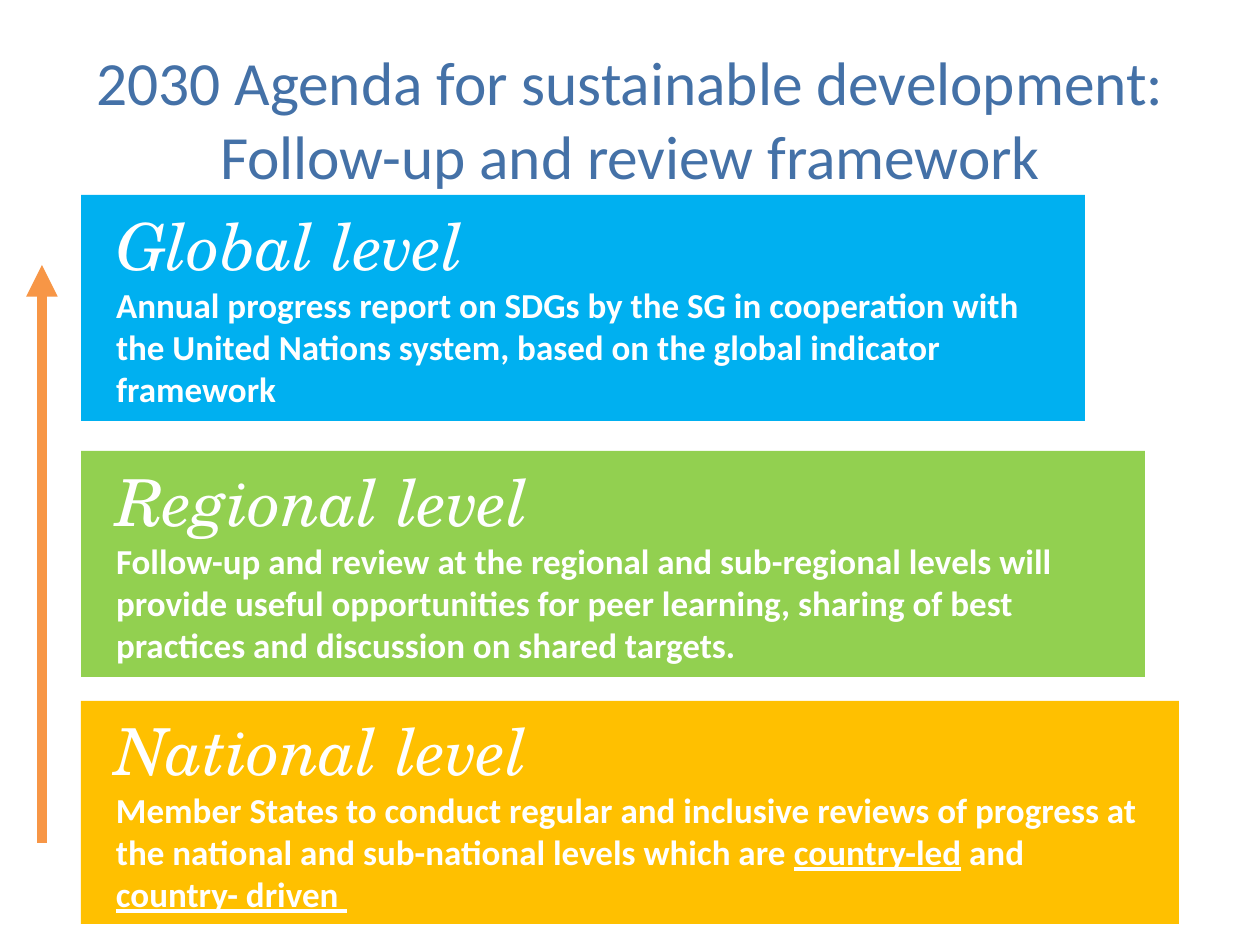
from lxml import etree
from pptx import Presentation
from pptx.dml.color import RGBColor
from pptx.enum.shapes import MSO_CONNECTOR, MSO_SHAPE
from pptx.enum.text import MSO_ANCHOR, PP_ALIGN
from pptx.oxml.ns import qn
from pptx.util import Emu, Pt

# Content: runs are (text, underlined); boxes are top, width, height in px
TITLE = "2030 Agenda for sustainable development: Follow-up and review framework"
LEVELS = [
    ("Global level", "00B0F0", (195, 1004, 226), [
        ("Annual progress report on SDGs by the SG in cooperation with the United "
         "Nations system, based on the global indicator framework", False)]),
    ("Regional level", "92D050", (451, 1064, 226), [
        ("Follow-up and review at the regional and sub-regional levels will provide "
         "useful opportunities for peer learning, sharing of best practices and "
         "discussion on shared targets.", False)]),
    ("National level", "FFC000", (701, 1098, 223), [
        ("Member States to conduct regular and inclusive reviews of progress at the "
         "national and sub-national levels which are ", False),
        ("country-led", True), (" and ", False), ("country- driven ", True)]),
]
LEVEL_LEFT, INSET = 81, 35
ARROW_X, ARROW_BOTTOM, ARROW_TOP = 42, 843, 265


def px(n):
    return Emu(round(n * 914400 / 126))


def color(hex_code):
    return RGBColor.from_string(hex_code)


def add_run(paragraph, text, size, font, hex_code, **styles):
    run = paragraph.add_run()
    run.text = text
    run.font.size, run.font.name = Pt(size), font
    run.font.color.rgb = color(hex_code)
    for style, value in styles.items():
        setattr(run.font, style, value)


deck = Presentation()
deck.slide_width, deck.slide_height = px(1260), px(945)
slide = deck.slides.add_slide(deck.slide_layouts[6])

# Level boxes
for heading, fill, (top, width, height), body in LEVELS:
    level = slide.shapes.add_shape(
        MSO_SHAPE.RECTANGLE, px(LEVEL_LEFT), px(top), px(width), px(height))
    level.shadow.inherit = False
    level.fill.solid()
    level.fill.fore_color.rgb = color(fill)
    level.line.fill.background()
    frame = level.text_frame
    frame.word_wrap = True
    frame.vertical_anchor = MSO_ANCHOR.MIDDLE
    frame.margin_left = frame.margin_right = px(INSET)
    frame.margin_top = frame.margin_bottom = px(INSET)
    heading_line, body_text = frame.paragraphs[0], frame.add_paragraph()
    heading_line.alignment = body_text.alignment = PP_ALIGN.LEFT
    add_run(heading_line, heading, 37, "TeX Gyre Schola", "FFFFFF", italic=True)
    for text, underlined in body:
        add_run(body_text, text, 20, "Calibri", "FFFFFF", bold=True, underline=underlined)

# Upward arrow
arrow = slide.shapes.add_connector(
    MSO_CONNECTOR.STRAIGHT, px(ARROW_X), px(ARROW_BOTTOM), px(ARROW_X), px(ARROW_TOP))
arrow.line.color.rgb = color("F79646")
arrow.line.width = Pt(6)
etree.SubElement(arrow.line._get_or_add_ln(), qn("a:tailEnd"), type="triangle")
etree.SubElement(arrow._element.spPr, qn("a:effectLst"))

# Title
title = slide.shapes.add_textbox(px(63), px(38), px(1134), px(157)).text_frame
title.word_wrap = True
title.paragraphs[0].alignment = PP_ALIGN.CENTER
add_run(title.paragraphs[0], TITLE, 35.1, "Calibri", "4471A7")

deck.save("out.pptx")
